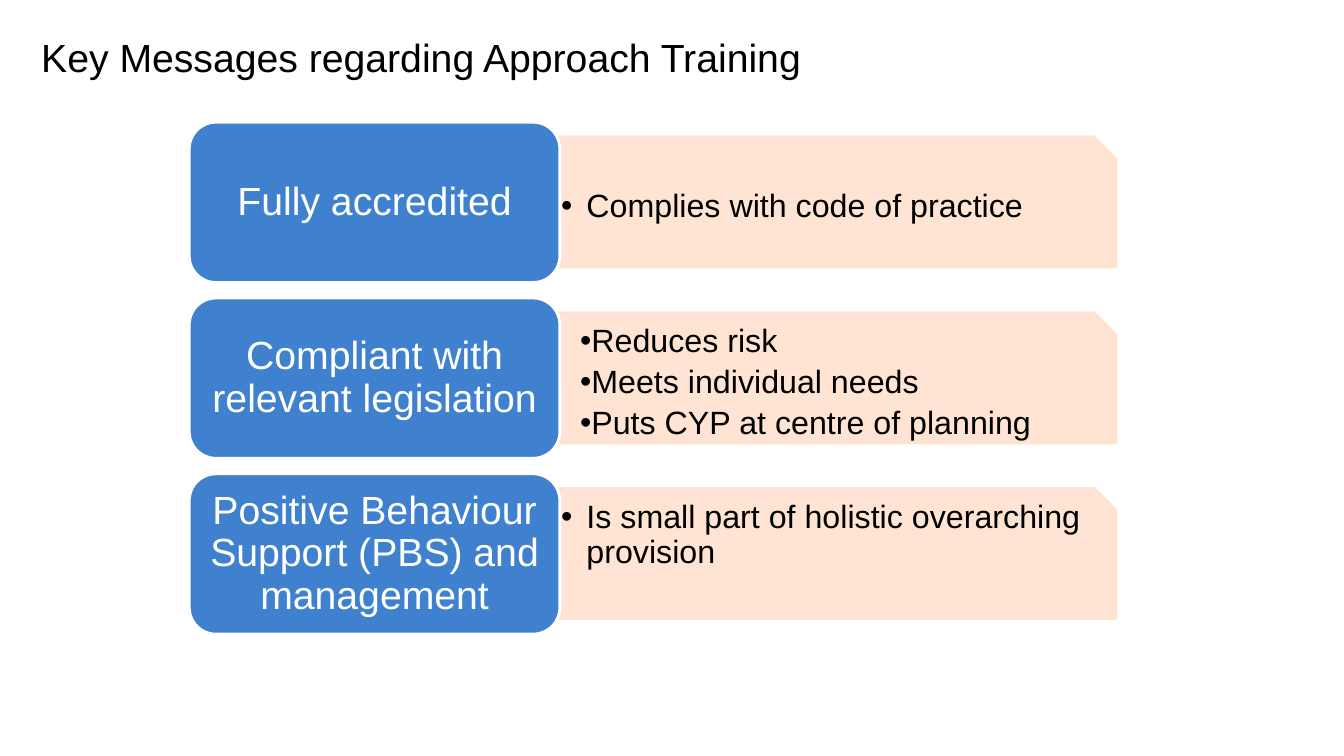
import pptx
import pptx.dml.color
import pptx.enum.shapes
import pptx.enum.text
import pptx.oxml
import pptx.oxml.ns
import pptx.util

Cm = pptx.util.Cm
Pt = pptx.util.Pt
Shapes = pptx.enum.shapes.MSO_SHAPE
Align = pptx.enum.text.PP_ALIGN
Anchor = pptx.enum.text.MSO_ANCHOR


def color(value):
    return pptx.dml.color.RGBColor.from_string(value)


def add_xml(parent, tag, **attributes):
    element = pptx.oxml.parse_xml(f"<a:{tag} {pptx.oxml.ns.nsdecls('a')}/>")
    for name, value in attributes.items():
        element.set(name, str(value))
    parent.append(element)


def write_text(shape, lines, size, ink="000000", align=Align.LEFT, anchor=Anchor.TOP,
               margins=(0.25, 0.25), spacing=1.0, after=0, bullet=None):
    frame = shape.text_frame
    frame.word_wrap = True
    frame.vertical_anchor = anchor
    frame.margin_left = frame.margin_right = Cm(margins[0])
    frame.margin_top = frame.margin_bottom = Cm(margins[1])
    for index, line in enumerate(lines):
        paragraph = frame.paragraphs[0] if index == 0 else frame.add_paragraph()
        paragraph.alignment = align
        paragraph.line_spacing = spacing
        paragraph.space_after = Pt(after)
        if bullet:
            left, indent = bullet
            properties = paragraph._p.get_or_add_pPr()
            properties.set("marL", str(Cm(left)))
            properties.set("indent", str(Cm(indent)))
            add_xml(properties, "buFont", typeface="Arial")
            add_xml(properties, "buChar", char="•")
        run = paragraph.add_run()
        run.text = line
        run.font.name = "Arial"
        run.font.size = Pt(size)
        run.font.color.rgb = color(ink)


class MessageSlide:
    label_fill = "3F81CF"
    panel_fill = "FFE2CF"
    white = "FFFFFF"

    def __init__(self, slide):
        self.slide = slide

    def title(self, text):
        box = self.slide.shapes.add_textbox(Cm(0.79), Cm(0.58), Cm(30.4), Cm(3.81))
        write_text(box, [text], 28)

    def block(self, kind, left, top, width, height, fill, line, opacity=100):
        shape = self.slide.shapes.add_shape(kind, Cm(left), Cm(top), Cm(width), Cm(height))
        shape.shadow.inherit = False
        shape.fill.solid()
        shape.fill.fore_color.rgb = color(fill)
        shape.line.color.rgb = color(line)
        shape.line.width = Pt(2)
        if opacity < 100:
            for solid in shape._element.spPr.iter(pptx.oxml.ns.qn("a:srgbClr")):
                add_xml(solid, "alpha", val=opacity * 1000)
        return shape

    def panel(self, top, lines, anchor, bullet):
        shape = self.block(Shapes.SNIP_1_RECTANGLE, 14.1, top, 14.02, 3.28,
                           self.panel_fill, self.panel_fill, opacity=90)
        write_text(shape, lines, 23, anchor=anchor, margins=(0.04, 0.04),
                   spacing=0.9, after=4.3, bullet=bullet)

    def label(self, top, text):
        shape = self.block(Shapes.ROUNDED_RECTANGLE, 4.77, top, 9.34, 4.04,
                           self.label_fill, self.white)
        write_text(shape, [text], 28, ink=self.white, align=Align.CENTER,
                   anchor=Anchor.MIDDLE, margins=(0.3, 0.15), spacing=0.9)


HANGING = (0.64, -0.64)
FLUSH = (0.48, 0)
MESSAGES = [
    ("Fully accredited", ["Complies with code of practice"], Anchor.MIDDLE, HANGING),
    ("Compliant with relevant legislation",
     ["Reduces risk", "Meets individual needs", "Puts CYP at centre of planning"],
     Anchor.TOP, FLUSH),
    ("Positive Behaviour Support (PBS) and management",
     ["Is small part of holistic overarching provision"], Anchor.TOP, HANGING),
]


def main():
    presentation = pptx.Presentation()
    presentation.slide_width = Cm(33.87)
    presentation.slide_height = Cm(19.05)
    page = MessageSlide(presentation.slides.add_slide(presentation.slide_layouts[6]))
    page.title("Key Messages regarding Approach Training")
    for row, (label, lines, anchor, bullet) in enumerate(MESSAGES):
        top = 3.08 + 4.43 * row
        page.panel(top + 0.37, lines, anchor, bullet)
        page.label(top, label)
    presentation.save("out.pptx")


if __name__ == "__main__":
    main()
